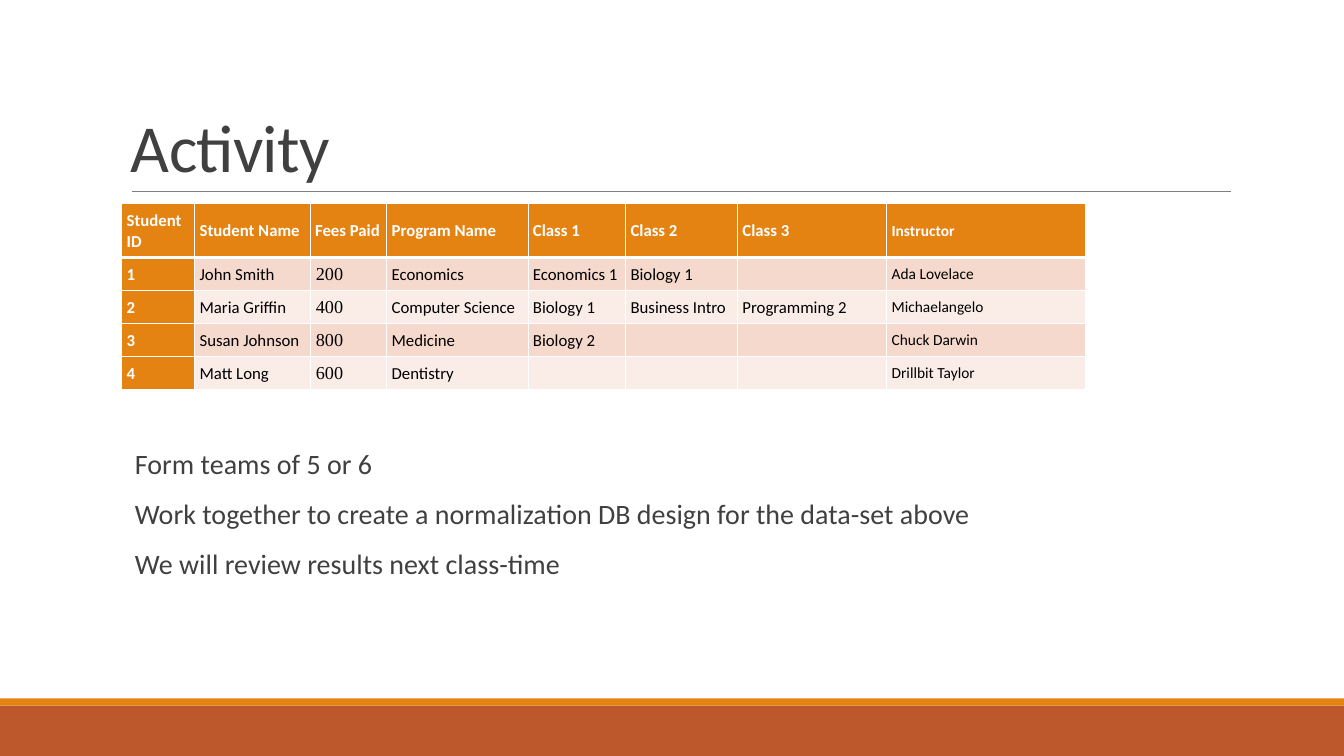
from dataclasses import dataclass

import lxml.etree
import pptx
import pptx.dml.color
import pptx.enum.shapes
import pptx.enum.text
import pptx.oxml.ns
import pptx.util

Cm = pptx.util.Cm
Pt = pptx.util.Pt
RGBColor = pptx.dml.color.RGBColor
qn = pptx.oxml.ns.qn

WHITE = RGBColor(0xFF, 0xFF, 0xFF)
BLACK = RGBColor(0, 0, 0)
ORANGE = RGBColor(0xE4, 0x83, 0x12)
RUST = RGBColor(0xBD, 0x58, 0x2C)
GREY = RGBColor(0x80, 0x80, 0x80)
DARK = RGBColor(0x40, 0x40, 0x40)
BAND_DARK = RGBColor(0xF5, 0xD9, 0xCC)
BAND_LIGHT = RGBColor(0xFA, 0xED, 0xE7)

WIDTH, HEIGHT = Cm(33.87), Cm(19.05)
LEFT, TEXT_WIDTH = Cm(3.05), Cm(27.94)
CELL_MARGIN, FEES_MARGIN = Cm(0.12), Cm(0.14)


@dataclass
class Band:
    top: float
    height: float
    color: RGBColor


@dataclass
class Column:
    heading: str
    width: float
    values: tuple[str, str, str, str]
    size: float = 12
    font: str = "Calibri"


BANDS = [Band(17.78, 1.27, RUST), Band(17.6, 0.18, ORANGE)]

COLUMNS = [
    Column("Student ID", 1.84, ("1", "2", "3", "4")),
    Column("Student Name", 2.91, ("John Smith", "Maria Griffin", "Susan Johnson", "Matt Long")),
    Column("Fees Paid", 1.93, ("200", "400", "800", "600"), 13, "Times New Roman"),
    Column("Program Name", 3.56, ("Economics", "Computer Science", "Medicine", "Dentistry")),
    Column("Class 1", 2.46, ("Economics 1", "Biology 1", "Biology 2", "")),
    Column("Class 2", 2.82, ("Biology 1", "Business Intro", "", "")),
    Column("Class 3", 3.76, ("", "Programming 2", "", "")),
    Column("Instructor", 5.01, ("Ada Lovelace", "Michaelangelo", "Chuck Darwin", "Drillbit Taylor"), 11),
]

TASKS = [
    "Form teams of 5 or 6",
    "Work together to create a normalization DB design for the data-set above",
    "We will review results next class-time",
]


def write(p, text: str, *, size: float, color: RGBColor, font: str = "Calibri",
          bold: bool = False, line: float = 1, before: float = 0, after: float = 0):
    p.line_spacing = line
    p.space_before, p.space_after = Pt(before), Pt(after)
    r = p.add_run()
    r.text = text
    r.font.size, r.font.name, r.font.bold = Pt(size), font, bold
    r.font.color.rgb = color
    return r


def add_band(s, band: Band) -> None:
    sp = s.shapes.add_shape(pptx.enum.shapes.MSO_SHAPE.RECTANGLE,
                            0, Cm(band.top), WIDTH, Cm(band.height))
    sp.shadow.inherit = False
    sp.fill.solid()
    sp.fill.fore_color.rgb = band.color
    sp.line.fill.background()


def add_rule(s) -> None:
    line = s.shapes.add_connector(pptx.enum.shapes.MSO_CONNECTOR.STRAIGHT,
                                  Cm(3.32), Cm(4.82), Cm(31.01), Cm(4.82))
    line.line.color.rgb = GREY
    line.line.width = Pt(0.5)
    lxml.etree.SubElement(line._element.spPr, qn("a:effectLst"))


def add_title(s) -> None:
    tf = s.shapes.add_textbox(LEFT, Cm(0.79), TEXT_WIDTH, Cm(4.03)).text_frame
    tf.word_wrap = True
    tf.vertical_anchor = pptx.enum.text.MSO_ANCHOR.BOTTOM
    r = write(tf.paragraphs[0], "Activity", size=48, color=DARK, line=0.85)
    r.font._element.set("spc", "-50")


def indent_with_blank_bullet(p) -> None:
    pPr = p._p.get_or_add_pPr()
    pPr.set("marL", str(Cm(0.25)))
    pPr.set("indent", str(-Cm(0.25)))
    color = lxml.etree.SubElement(pPr, qn("a:buClr"))
    lxml.etree.SubElement(color, qn("a:srgbClr"), val=str(ORANGE))
    lxml.etree.SubElement(pPr, qn("a:buChar"), char=" ")


def add_tasks(s) -> None:
    tf = s.shapes.add_textbox(LEFT, Cm(11.23), TEXT_WIDTH, Cm(5.08)).text_frame
    tf.word_wrap = True
    tf.margin_left = tf.margin_right = 0
    for i, task in enumerate(TASKS):
        p = tf.add_paragraph() if i else tf.paragraphs[0]
        write(p, task, size=20, color=DARK, line=0.9, before=12, after=2)
        indent_with_blank_bullet(p)


def set_borders(cell, top: float, bottom: float) -> None:
    """Draw white borders; top and bottom are widths in points."""
    tcPr = cell._tc.get_or_add_tcPr()
    for side, width in (("L", 1), ("R", 1), ("T", top), ("B", bottom)):
        ln = lxml.etree.SubElement(tcPr, qn(f"a:ln{side}"), w=str(Pt(width)))
        fill = lxml.etree.SubElement(ln, qn("a:solidFill"))
        lxml.etree.SubElement(fill, qn("a:srgbClr"), val=str(WHITE))


def fill_cell(cell, column: Column, row: int, accent: bool) -> None:
    text = column.values[row - 1] if row else column.heading
    set_borders(cell, 3 if row == 1 else 1, 1 if row else 3)
    cell.fill.solid()
    cell.fill.fore_color.rgb = ORANGE if accent else BAND_DARK if row % 2 else BAND_LIGHT
    cell.vertical_anchor = pptx.enum.text.MSO_ANCHOR.MIDDLE
    in_fees = row and column.heading == "Fees Paid"
    cell.margin_left = cell.margin_right = FEES_MARGIN if in_fees else CELL_MARGIN
    cell.margin_top = cell.margin_bottom = CELL_MARGIN if text else 0
    if text:
        is_fee_heading = not row and column.heading == "Fees Paid"
        write(cell.text_frame.paragraphs[0], text,
              size=12 if is_fee_heading else column.size,
              font=column.font if row else "Calibri",
              color=WHITE if accent else BLACK, bold=accent, line=1.07, after=18)


def add_students(s) -> None:
    heights = [1.36] + [0.82] * 4
    table = s.shapes.add_table(len(heights), len(COLUMNS), Cm(3.07), Cm(5.13),
                               Cm(sum(c.width for c in COLUMNS)), Cm(sum(heights))).table
    table.first_col = True
    for row, height in enumerate(heights):
        table.rows[row].height = Cm(height)
    for col, column in enumerate(COLUMNS):
        table.columns[col].width = Cm(column.width)
        for row in range(len(heights)):
            fill_cell(table.cell(row, col), column, row, accent=row == 0 or col == 0)


def main() -> None:
    prs = pptx.Presentation()
    prs.slide_width, prs.slide_height = WIDTH, HEIGHT
    s = prs.slides.add_slide(prs.slide_layouts[6])
    for band in BANDS:
        add_band(s, band)
    add_rule(s)
    add_title(s)
    add_tasks(s)
    add_students(s)
    prs.save("out.pptx")


if __name__ == "__main__":
    main()
